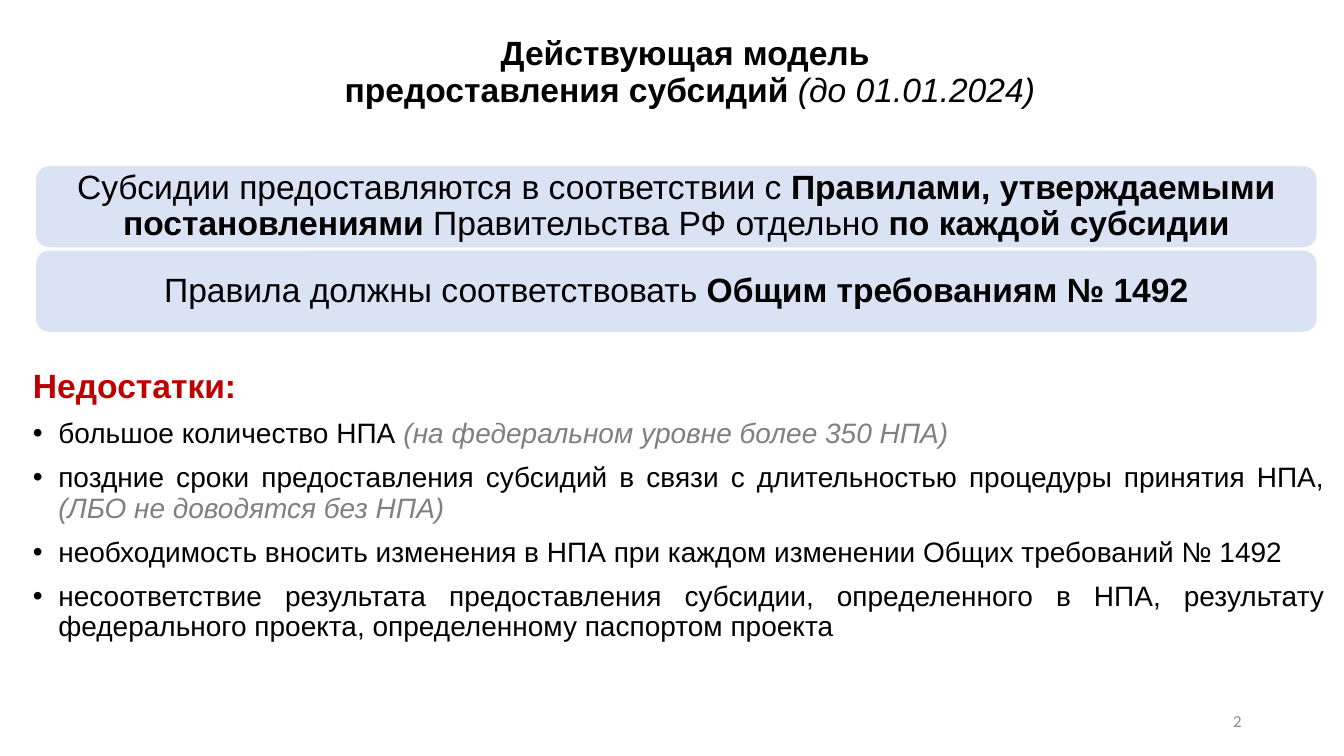
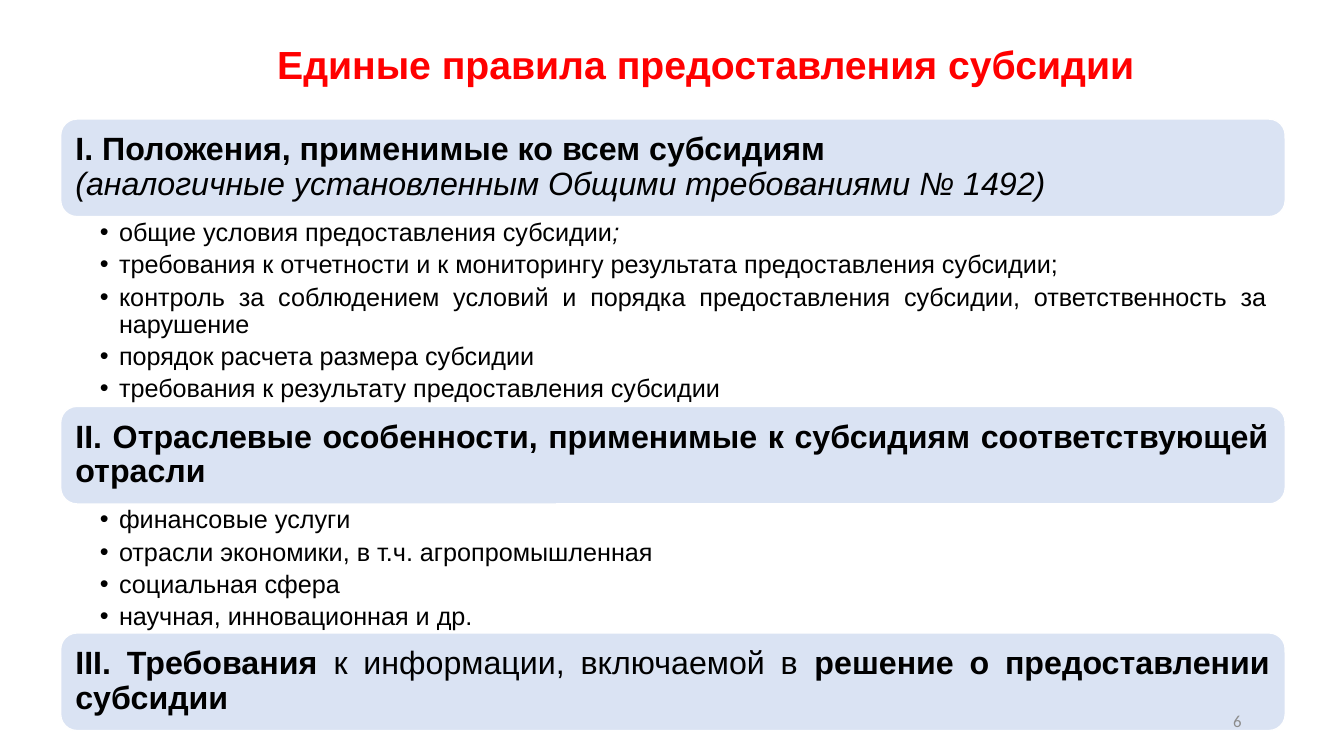
from lxml import etree
from pptx import Presentation
from pptx.dml.color import RGBColor
from pptx.enum import shapes, text
from pptx.oxml import ns
from pptx.util import Cm, Pt

BLACK = RGBColor(0x00, 0x00, 0x00)
WHITE = RGBColor(0xFF, 0xFF, 0xFF)
RED = RGBColor(0xFF, 0x00, 0x00)
DARK_RED = RGBColor(0xC0, 0x00, 0x00)
GRAY = RGBColor(0x80, 0x80, 0x80)
NUMBER_GRAY = RGBColor(0x8C, 0x8C, 0x8C)
BAND_BLUE = RGBColor(0xDA, 0xE3, 0xF3)

CENTER = text.PP_ALIGN.CENTER
LEFT = text.PP_ALIGN.LEFT
RIGHT = text.PP_ALIGN.RIGHT
JUSTIFY = text.PP_ALIGN.JUSTIFY
MIDDLE = text.MSO_ANCHOR.MIDDLE
TOP = text.MSO_ANCHOR.TOP

TITLE_AND_BODY = 1
TITLE_ONLY = 5


def span(content, **style):
    return content, style


def bold(content, **style):
    return span(content, bold=True, **style)


def italic(content, **style):
    return span(content, italic=True, **style)


def add_text(paragraph, content, size=18, font="Arial", color=BLACK, bold=False, italic=False):
    for index, line in enumerate(content.split("\n")):
        if index:
            paragraph.add_line_break()
        if line:
            run = paragraph.add_run()
            run.text = line
            run.font.size = Pt(size)
            run.font.name = font
            run.font.color.rgb = color
            run.font.bold = bold
            run.font.italic = italic


def set_bullet(paragraph, indent):
    properties = paragraph._p.get_or_add_pPr()
    properties.set("marL", str(int(Cm(indent))))
    properties.set("indent", str(-int(Cm(indent))))
    if indent:
        etree.SubElement(properties, ns.qn("a:buFont")).set("typeface", "Arial")
        etree.SubElement(properties, ns.qn("a:buChar")).set("char", "•")
    else:
        etree.SubElement(properties, ns.qn("a:buNone"))


class Deck:
    def __init__(self):
        self.presentation = Presentation()
        self.presentation.slide_width = Cm(33.87)
        self.presentation.slide_height = Cm(19.05)
        self.slide = None

    def start_slide(self, layout):
        self.slide = self.presentation.slides.add_slide(self.presentation.slide_layouts[layout])

    def place(self, shape, left, top, width, height):
        shape.left, shape.top = Cm(left), Cm(top)
        shape.width, shape.height = Cm(width), Cm(height)

    def prepare(self, shape, anchor, margins=(0.25, 0.13, 0.25, 0.13)):
        frame = shape.text_frame
        frame.word_wrap = True
        frame.auto_size = text.MSO_AUTO_SIZE.NONE
        frame.vertical_anchor = anchor
        (frame.margin_left, frame.margin_top,
         frame.margin_right, frame.margin_bottom) = map(Cm, margins)
        return frame

    def set_paragraph(self, paragraph, spans, align, before=0, after=0, indent=0, **style):
        paragraph.alignment = align
        paragraph.line_spacing = 0.9
        paragraph.space_before = Pt(before)
        paragraph.space_after = Pt(after)
        set_bullet(paragraph, indent)
        for content, changes in spans:
            add_text(paragraph, content, **{**style, **changes})

    def title(self, spans, box, **style):
        shape = self.slide.shapes.title
        self.place(shape, *box)
        frame = self.prepare(shape, MIDDLE)
        self.set_paragraph(frame.paragraphs[0], spans, CENTER, **style)

    def body(self, heading, items, box):
        shape = self.slide.placeholders[1]
        self.place(shape, *box)
        frame = self.prepare(shape, TOP)
        self.set_paragraph(frame.paragraphs[0], [heading], JUSTIFY, before=10, size=24)
        for spans in items:
            self.set_paragraph(frame.add_paragraph(), spans, JUSTIFY,
                               before=10, indent=0.64, size=20)

    def band(self, spans, left, top, width, height, align, size):
        shape = self.slide.shapes.add_shape(
            shapes.MSO_SHAPE.ROUNDED_RECTANGLE, Cm(left), Cm(top), Cm(width), Cm(height))
        shape.shadow.inherit = False
        shape.fill.solid()
        shape.fill.fore_color.rgb = BAND_BLUE
        shape.line.color.rgb = WHITE
        shape.line.width = Pt(1)
        frame = self.prepare(shape, MIDDLE, (0.25,) * 4)
        self.set_paragraph(frame.paragraphs[0], spans, align, size=size)

    def text_box(self, left, top, width, height):
        return self.slide.shapes.add_textbox(Cm(left), Cm(top), Cm(width), Cm(height))

    def bullets(self, items, left, top, width, height):
        shape = self.text_box(left, top, width, height)
        frame = self.prepare(shape, TOP, (0.99, 0.08, 0.46, 0.08))
        for index, spans in enumerate(items):
            paragraph = frame.add_paragraph() if index else frame.paragraphs[0]
            self.set_paragraph(paragraph, spans, JUSTIFY, after=3.6, indent=0.48, size=18)

    def number(self, value):
        frame = self.prepare(self.text_box(23.92, 17.66, 7.62, 1.01), MIDDLE)
        paragraph = frame.paragraphs[0]
        paragraph.alignment = RIGHT
        add_text(paragraph, str(value), size=12, font="Calibri", color=NUMBER_GRAY)


def build_current_model(deck):
    deck.start_slide(TITLE_AND_BODY)
    deck.title([bold("Действующая модель \nпредоставления субсидий "), italic("(до 01.01.2024)")],
               (2.41, 0, 29.95, 3.68), size=24)
    deck.body(
        bold("Недостатки:", color=DARK_RED),
        [
            [span("большое количество НПА "),
             italic("(на федеральном уровне более 350 НПА)", color=GRAY)],
            [span("поздние сроки предоставления субсидий в связи с длительностью "
                  "процедуры принятия НПА, "),
             italic("(ЛБО не доводятся без НПА)", color=GRAY)],
            [span("необходимость вносить изменения в НПА при каждом изменении "
                  "Общих требований № 1492")],
            [span("несоответствие результата предоставления субсидии, определенного в НПА, "
                  "результату федерального проекта, определенному паспортом проекта")],
        ],
        (0.58, 9.17, 33.05, 7.85))
    rules = [
        [span("Субсидии предоставляются в соответствии с "),
         bold("Правилами, утверждаемыми постановлениями "),
         span("Правительства РФ отдельно "), bold("по каждой субсидии")],
        [span("Правила должны соответствовать"), bold(" Общим требованиям № 1492")],
    ]
    for index, spans in enumerate(rules):
        deck.band(spans, 0.89, 4.17 + index * 2.13, 32.31, 2.08, CENTER, 24)
    deck.number(2)


def build_unified_rules(deck):
    deck.start_slide(TITLE_ONLY)
    deck.title([bold("Единые правила предоставления субсидии")],
               (3.18, 0.69, 29.21, 1.98), size=28, color=RED)
    sections = [
        ([bold("I. Положения, применимые ко всем субсидиям\n"),
          italic("(аналогичные установленным Общими требованиями № 1492)")],
         LEFT, 4.78,
         [[span("общие условия предоставления субсидии"), italic(";")],
          [span("требования к отчетности и к мониторингу результата предоставления субсидии;")],
          [span("контроль за соблюдением условий и порядка предоставления субсидии, "
                "ответственность за нарушение")],
          [span("порядок расчета размера субсидии")],
          [span("требования к результату предоставления субсидии")]]),
        ([bold("II. Отраслевые особенности, применимые к субсидиям соответствующей отрасли")],
         JUSTIFY, 3.25,
         [[span("финансовые услуги")],
          [span("отрасли экономики, в т.ч. агропромышленная")],
          [span("социальная сфера")],
          [span("научная, инновационная и др.")]]),
        ([bold("III. Требования "), span("к информации, включаемой в "),
          bold("решение о предоставлении субсидии")],
         JUSTIFY, 0, []),
    ]
    left, top, width, band_height = 1.53, 3, 30.86, 2.46
    for heading, align, list_height, items in sections:
        deck.band(heading, left, top, width, band_height, align, 23)
        top += band_height
        if items:
            deck.bullets(items, left, top, width, list_height)
        top += list_height
    deck.number(6)


def main():
    deck = Deck()
    build_current_model(deck)
    build_unified_rules(deck)
    deck.presentation.save("out.pptx")


if __name__ == "__main__":
    main()
